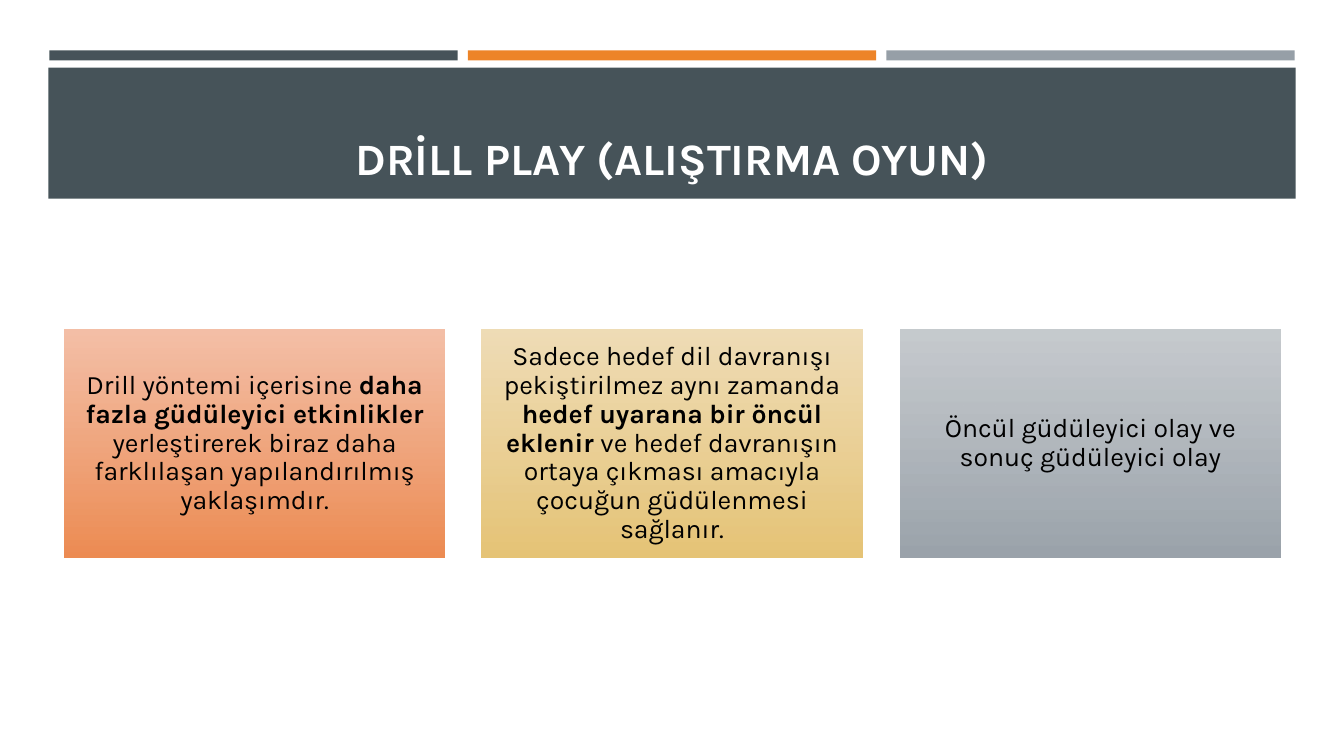
import pptx
import pptx.dml.color
import pptx.enum.shapes
import pptx.enum.text
import pptx.oxml
import pptx.oxml.ns
import pptx.util

EMU_PER_PX = 9144
SLATE, ORANGE, GREY = "465359", "ED8428", "969FA7"
CARDS = [
    ("F3B89D", "ED8C53", [
        ("Drill yöntemi içerisine ", False),
        ("daha fazla güdüleyici etkinlikler ", True),
        ("yerleştirerek biraz daha farklılaşan yapılandırılmış yaklaşımdır.", False),
    ]),
    ("EED9AE", "E6C476", [
        ("Sadece hedef dil davranışı pekiştirilmez aynı zamanda ", False),
        ("hedef uyarana bir öncül eklenir ", True),
        ("ve hedef davranışın ortaya çıkması amacıyla çocuğun güdülenmesi sağlanır.", False),
    ]),
    ("C0C5C9", "9BA3AB", [
        ("Öncül güdüleyici olay ve sonuç güdüleyici olay", False),
    ]),
]


def px(length):
    return pptx.util.Emu(length * EMU_PER_PX)


def colour(value):
    return pptx.dml.color.RGBColor.from_string(value)


def write(frame, spans, font="Karla", size=19, ink="000000", anchor="MIDDLE",
          inset=(8, 8), spacing=0.9):
    frame.word_wrap = True
    frame.auto_size = pptx.enum.text.MSO_AUTO_SIZE.NONE
    frame.vertical_anchor = getattr(pptx.enum.text.MSO_ANCHOR, anchor)
    frame.margin_left = frame.margin_right = px(inset[0])
    frame.margin_top = frame.margin_bottom = px(inset[1])
    para = frame.paragraphs[0]
    para.alignment = pptx.enum.text.PP_ALIGN.CENTER
    para.line_spacing = spacing
    for text, bold in spans:
        span = para.add_run()
        span.text = text
        span.font.name = font
        span.font.size = pptx.util.Pt(size)
        span.font.bold = bold
        span.font.color.rgb = colour(ink)


class SlideBuilder:
    """Holds the current slide and draws its elements in the slide's style."""

    def __init__(self, deck):
        self.page = deck.slides.add_slide(deck.slide_layouts[5])

    def box(self, left, top, width, height):
        box = self.page.shapes.add_shape(
            pptx.enum.shapes.MSO_SHAPE.RECTANGLE,
            px(left), px(top), px(width), px(height))
        box.shadow.inherit = False
        box.line.fill.background()
        return box

    def bar(self, left, top, width, height, fill):
        bar = self.box(left, top, width, height)
        bar.fill.solid()
        bar.fill.fore_color.rgb = colour(fill)

    def title(self, text, left, top, width, height):
        title = self.page.shapes.title
        title.left, title.top = px(left), px(top)
        title.width, title.height = px(width), px(height)
        self.page.shapes.element.append(title.element)
        write(title.text_frame, [(text, True)], size=32, ink="FFFFFF",
              anchor="BOTTOM", inset=(10, 5), spacing=1.0)

    def card(self, left, top, width, height, light, dark, spans):
        card = self.box(left, top, width, height)
        card.fill.gradient()
        card.fill.gradient_angle = 270
        for stop, value in zip(card.fill.gradient_stops, (light, dark)):
            stop.color.rgb = colour(value)
        first = next(card.element.iter(pptx.oxml.ns.qn("a:srgbClr")))
        first.append(pptx.oxml.parse_xml(
            f'<a:alpha {pptx.oxml.ns.nsdecls("a")} val="90000"/>'))
        write(card.text_frame, spans)


def main():
    deck = pptx.Presentation()
    deck.slide_width, deck.slide_height = px(1333), px(750)
    slide = SlideBuilder(deck)
    for column, fill in enumerate((SLATE, ORANGE, GREY)):
        slide.bar(49 + 415 * column, 50, 405, 10, fill)
    slide.bar(48, 67, 1237, 130, SLATE)
    slide.title("DRİLL PLAY (ALIŞTIRMA OYUN)", 64, 77, 1206, 111)
    for column, (light, dark, spans) in enumerate(CARDS):
        slide.card(64 + 414 * column + column // 2, 327, 377, 226, light, dark, spans)
    deck.save("out.pptx")


if __name__ == "__main__":
    main()
